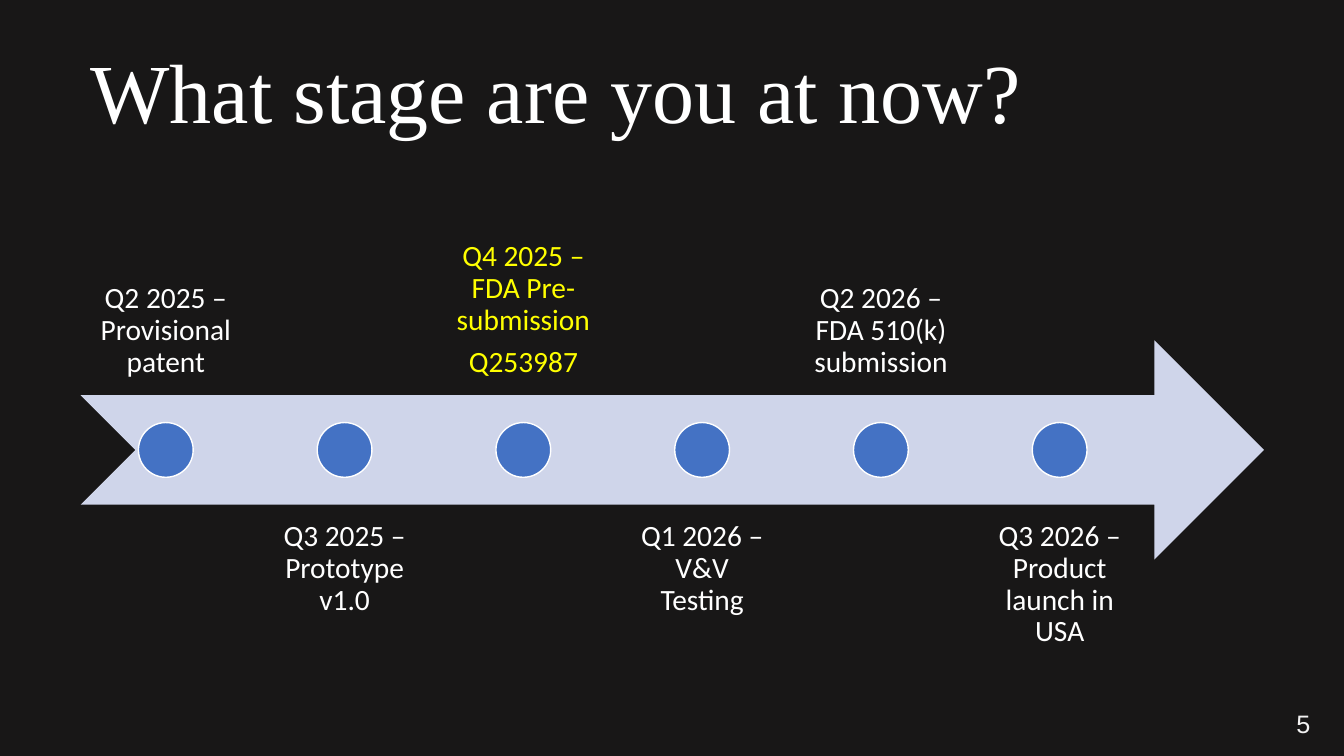
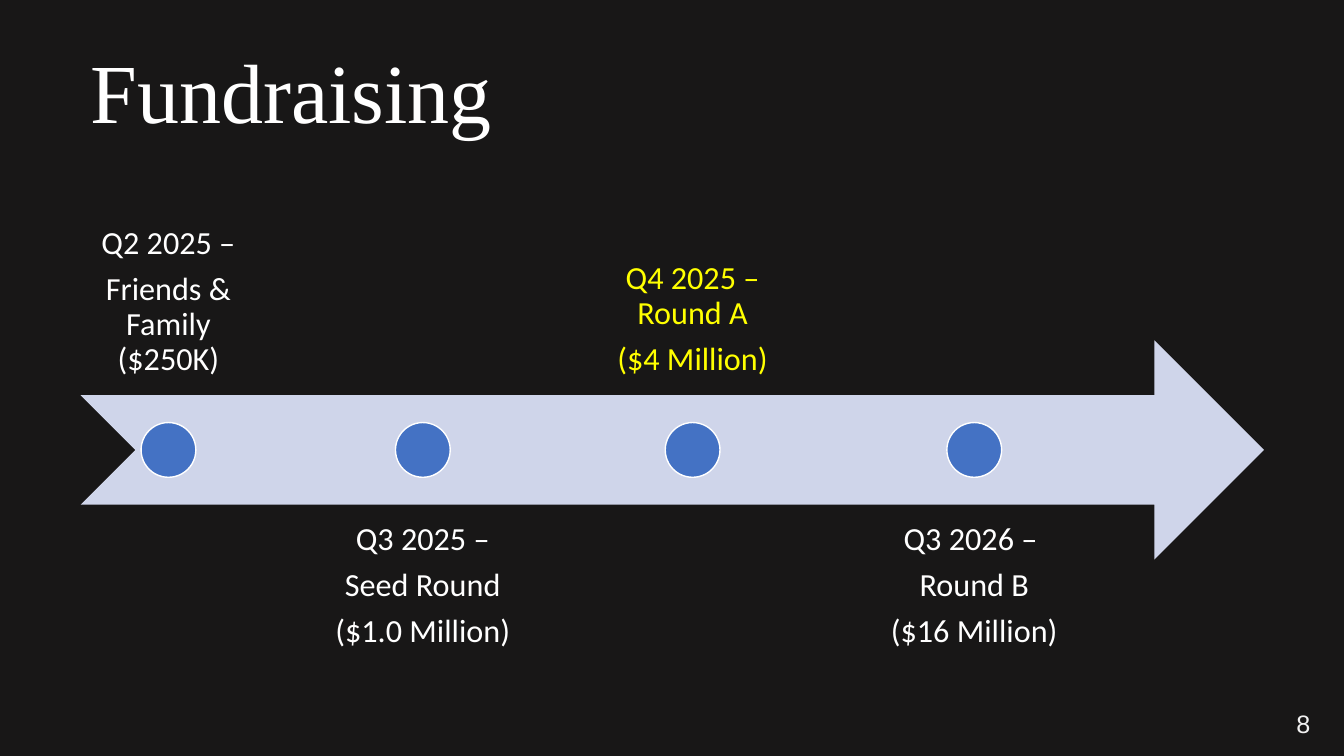
"""Build two dark timeline slides: project stages and fundraising."""
from pptx import Presentation
from pptx.dml.color import RGBColor
from pptx.enum.shapes import MSO_SHAPE
from pptx.enum.text import MSO_ANCHOR, PP_ALIGN
from pptx.util import Pt

ARROW, DOT = MSO_SHAPE.NOTCHED_RIGHT_ARROW, MSO_SHAPE.OVAL
TOP, MID, BOTTOM = MSO_ANCHOR.TOP, MSO_ANCHOR.MIDDLE, MSO_ANCHOR.BOTTOM
LEFT, CENTER = PP_ALIGN.LEFT, PP_ALIGN.CENTER

COLORS = {"back": "181717", "text": "FFFFFF", "now": "FFFF00",
          "page": "F2F2F2", "arrow": "CFD5EA", "dot": "4472C4"}
EDGE, SPAN = 57.6, 845.3
AXIS, BAND = 321.4, 156.5
SIDES = ("left", "right", "top", "bottom")

STAGES = [
    (121.7, "text", ["Q2 2025 – Provisional patent"]),
    (121.7, "text", ["Q3 2025 – Prototype v1.0"]),
    (121.7, "now", ["Q4 2025 – FDA Pre-submission", "Q253987"]),
    (121.7, "text", ["Q1 2026 – V&V Testing"]),
    (121.7, "text", ["Q2 2026 – FDA 510(k) submission"]),
    (121.7, "text", ["Q3 2026 – Product launch in USA"]),
]
ROUNDS = [
    (125.5, "text", ["Q2 2025 – ", "Friends & Family ($250K)"]),
    (225.5, "text", ["Q3 2025 –", "Seed Round", "($1.0 Million)"]),
    (147.5, "now", ["Q4 2025 – Round A", "($4 Million)"]),
    (242.5, "text", ["Q3 2026 – ", "Round B", "($16 Million)"]),
]


def color(name):
    """Return the named colour."""
    return RGBColor.from_string(COLORS[name])


def apply(item, form):
    """Set each attribute in form on item."""
    for key, value in form.items():
        setattr(item, key, value)


def place(item, x, y, wide, high):
    """Move and size an item, in points."""
    apply(item, {"left": Pt(x), "top": Pt(y),
                 "width": Pt(wide), "height": Pt(high)})


def write(frame, lines, face, size, tint, **form):
    """Fill a text frame with lines that share one format."""
    frame.text = "\n".join(lines)
    for para in frame.paragraphs:
        apply(para, form)
        for run in para.runs:
            apply(run.font, {"name": face, "size": Pt(size)})
            run.font.color.rgb = color(tint)


def add_box(slide, x, y, wide, high):
    """Add a wrapping text box and return its frame."""
    frame = slide.shapes.add_textbox(Pt(x), Pt(y), Pt(wide), Pt(high)).text_frame
    frame.word_wrap = True
    return frame


def add_form(slide, kind, x, y, wide, high, fill, line=None):
    """Add a flat preset shape."""
    shape = slide.shapes.add_shape(kind, Pt(x), Pt(y), Pt(wide), Pt(high))
    shape.shadow.inherit = False
    shape.fill.solid()
    shape.fill.fore_color.rgb = color(fill)
    if line:
        shape.line.color.rgb = color(line)
        shape.line.width = Pt(1)
    else:
        shape.line.fill.background()


def add_label(slide, x, wide, lines, size, tint, above):
    """Add one label over or under the arrow."""
    y = AXIS - 1.25 * BAND if above else AXIS + BAND / 4
    frame = add_box(slide, x, y, wide, BAND)
    frame.vertical_anchor = BOTTOM if above else TOP
    inset = Pt(0.56 * size)
    apply(frame, {f"margin_{side}": inset for side in SIDES})
    write(frame, lines, "Calibri", size, tint, alignment=CENTER,
          line_spacing=0.9, space_after=Pt(0.35 * size))


def add_line(slide, steps, size, gap):
    """Add the arrow with a dot and a label for each step."""
    add_form(slide, ARROW, EDGE, AXIS - BAND / 2, SPAN, BAND, "arrow")
    dot, x = BAND / 4, EDGE
    for count, (wide, tint, lines) in enumerate(steps):
        add_label(slide, x, wide, lines, size, tint, count % 2 == 0)
        add_form(slide, DOT, x + (wide - dot) / 2, AXIS - dot / 2,
                 dot, dot, "dot", "text")
        x += wide + gap


def add_slide(deck, title, page):
    """Add a slide with its title and page number."""
    slide = deck.slides.add_slide(deck.slide_layouts.get_by_name("Title Only"))
    head = slide.shapes.title
    place(head, EDGE, 32.4, SPAN, 72.7)
    head.text_frame.vertical_anchor = MID
    write(head.text_frame, [title], "Times New Roman", 60, "text",
          alignment=LEFT, line_spacing=0.9)
    write(add_box(slide, 910, 502.6, 42, 29), [page], "Arial", 18, "page",
          alignment=CENTER)
    return slide


def main():
    """Build and save the deck."""
    deck = Presentation()
    apply(deck, {"slide_width": Pt(960), "slide_height": Pt(540)})
    back = deck.slide_master.background.fill
    back.solid()
    back.fore_color.rgb = color("back")
    add_line(add_slide(deck, "What stage are you at now?", "5"), STAGES, 21, 6)
    add_line(add_slide(deck, "Fundraising", "8"), ROUNDS, 23, 6.2)
    deck.save("out.pptx")


if __name__ == "__main__":
    main()
